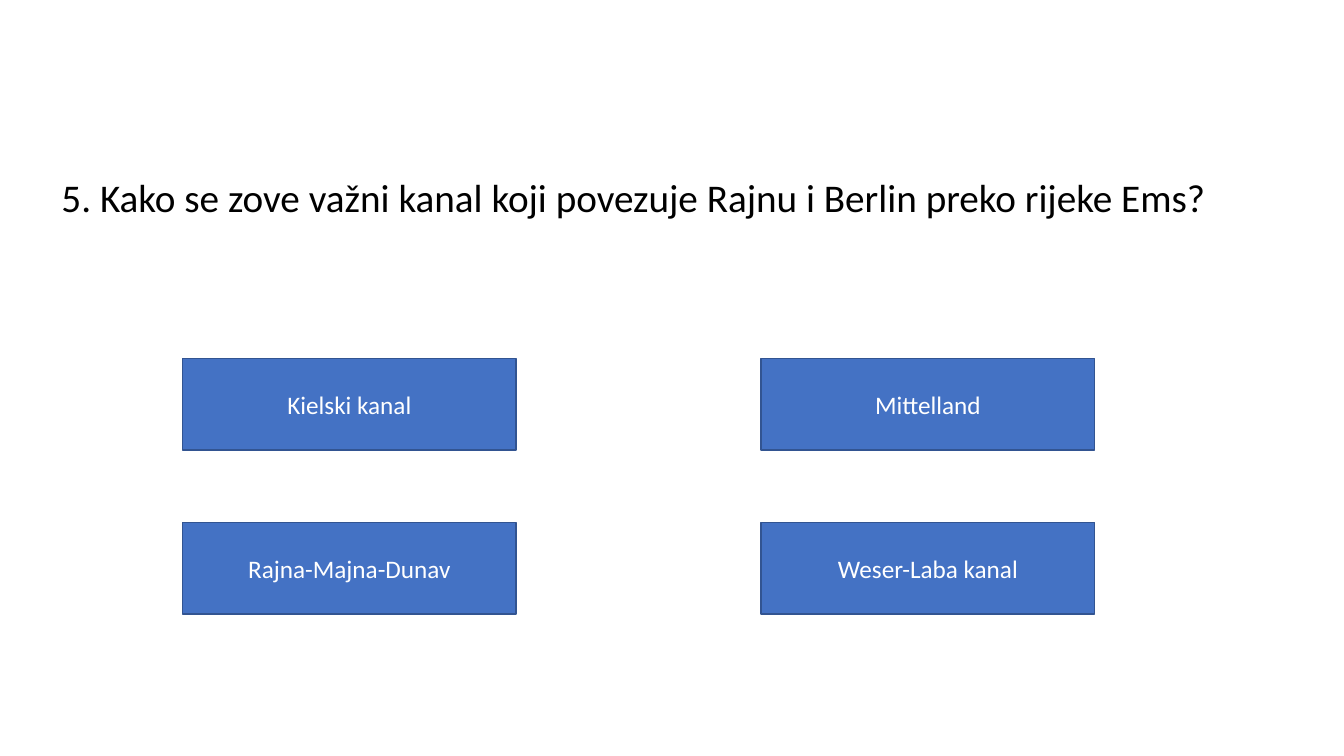
from dataclasses import dataclass

from pptx import Presentation
from pptx.dml.color import RGBColor
from pptx.enum.shapes import MSO_SHAPE
from pptx.enum.text import MSO_ANCHOR, MSO_AUTO_SIZE, PP_ALIGN
from pptx.slide import Slide
from pptx.text.text import TextFrame
from pptx.util import Cm, Pt

RECT = MSO_SHAPE.RECTANGLE
MIDDLE = MSO_ANCHOR.MIDDLE
CENTER = PP_ALIGN.CENTER
GROW = MSO_AUTO_SIZE.SHAPE_TO_FIT_TEXT

FONT = "Calibri"
LEFT, TOP = 4.6, 9.03
STEP_X, STEP_Y = 14.58, 4.13
WIDTH, HEIGHT = 8.41, 2.31


@dataclass
class Answer:
    text: str
    row: int
    col: int


ANSWERS = [
    Answer("Kielski kanal", 0, 0),
    Answer("Mittelland", 0, 1),
    Answer("Rajna-Majna-Dunav", 1, 0),
    Answer("Weser-Laba kanal", 1, 1),
]


def color(code: str) -> RGBColor:
    return RGBColor.from_string(code)


def write(frame: TextFrame, text: str, size: int, code: str) -> None:
    frame.word_wrap = True
    frame.text = text
    font = frame.paragraphs[0].runs[0].font
    font.name = FONT
    font.size = Pt(size)
    font.color.rgb = color(code)


def add_question(slide: Slide, text: str) -> None:
    box = slide.shapes.add_textbox(Cm(1.3), Cm(4.24), Cm(31.65), Cm(1.45))
    write(box.text_frame, text, 28, "000000")
    box.text_frame.auto_size = GROW


def add_answer(slide: Slide, answer: Answer) -> None:
    left = Cm(LEFT + answer.col * STEP_X)
    top = Cm(TOP + answer.row * STEP_Y)
    box = slide.shapes.add_shape(RECT, left, top, Cm(WIDTH), Cm(HEIGHT))
    box.shadow.inherit = False
    box.fill.solid()
    box.fill.fore_color.rgb = color("4472C4")
    box.line.color.rgb = color("325491")
    box.line.width = Pt(1)
    write(box.text_frame, answer.text, 18, "FFFFFF")
    box.text_frame.vertical_anchor = MIDDLE
    box.text_frame.paragraphs[0].alignment = CENTER


def main() -> None:
    deck = Presentation()
    deck.slide_width, deck.slide_height = Cm(33.87), Cm(19.05)
    slide = deck.slides.add_slide(deck.slide_layouts[6])
    add_question(
        slide,
        "5. Kako se zove važni kanal koji povezuje Rajnu i Berlin preko rijeke Ems?",
    )
    for answer in ANSWERS:
        add_answer(slide, answer)
    deck.save("out.pptx")


if __name__ == "__main__":
    main()
